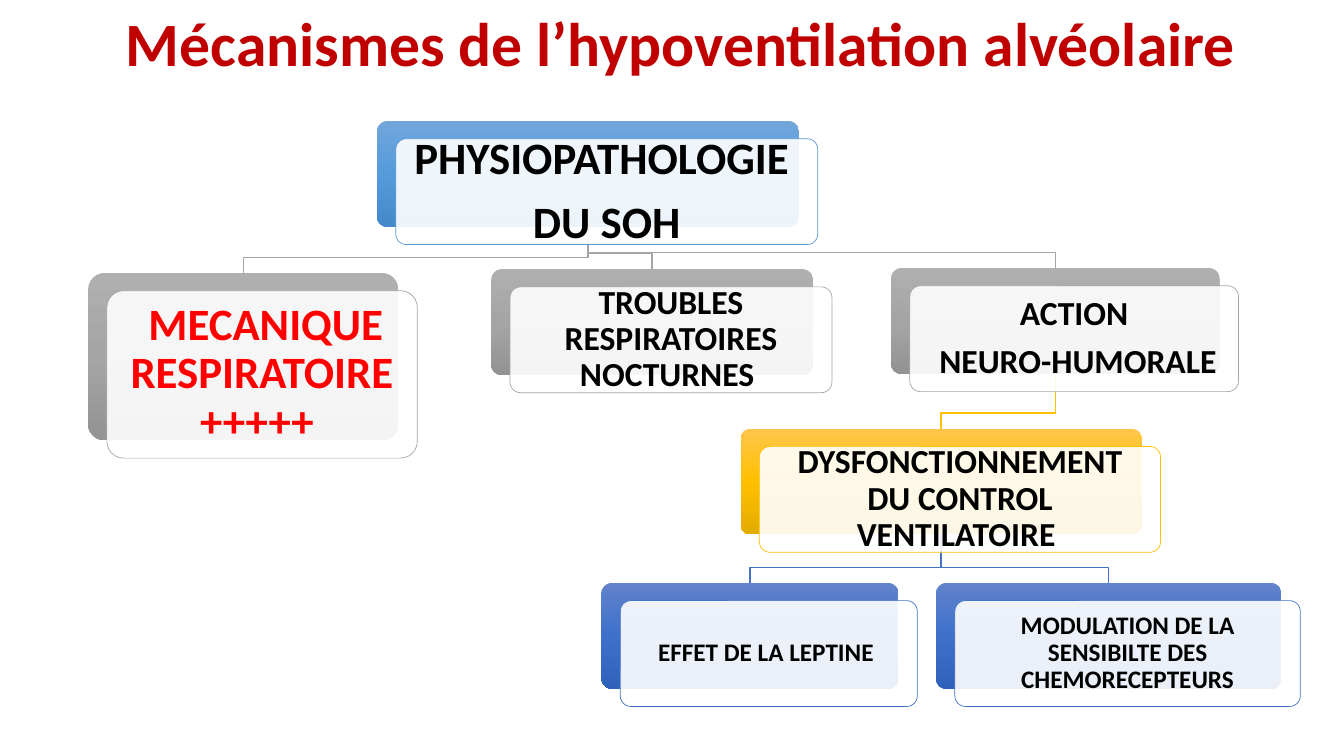
from copy import deepcopy
from lxml.etree import SubElement
from pptx import Presentation
from pptx.dml.color import RGBColor
from pptx.enum.shapes import MSO_SHAPE
from pptx.enum.text import MSO_ANCHOR, PP_ALIGN
from pptx.oxml.ns import qn
from pptx.util import Inches, Pt

WIDE, HIGH = Inches(13.33), Inches(7.5)
COL, ROW = WIDE / 100, HIGH / 100
SHIFT, DROP, BEND = 1.4, 2.35, 2.05

WHITE = RGBColor(0xFF, 0xFF, 0xFF)
BLACK = RGBColor(0x00, 0x00, 0x00)
RED = RGBColor(0xFF, 0x00, 0x00)
DARK = RGBColor(0xC0, 0x00, 0x00)
SKY = [RGBColor(0x71, 0xA6, 0xDB), RGBColor(0x55, 0x9B, 0xDB),
       RGBColor(0x44, 0x8A, 0xCA), RGBColor(0x5B, 0x9B, 0xD5)]
GRAY = [RGBColor(0xAF, 0xAF, 0xAF), RGBColor(0xA5, 0xA5, 0xA5),
        RGBColor(0x93, 0x93, 0x93), RGBColor(0xA5, 0xA5, 0xA5)]
GOLD = [RGBColor(0xFF, 0xC6, 0x4B), RGBColor(0xFF, 0xC0, 0x00),
        RGBColor(0xE3, 0xAB, 0x00), RGBColor(0xFF, 0xC0, 0x00)]
BLUE = [RGBColor(0x61, 0x83, 0xCB), RGBColor(0x3E, 0x70, 0xCA),
        RGBColor(0x30, 0x62, 0xBB), RGBColor(0x44, 0x72, 0xC4)]

NODES = {
    "root": ((28.05, 16, 31.4, 14), SKY, BLACK, 32,
             [[("PHYSIOPATHOLOGIE ", 32)], [("DU SOH", 32)]]),
    "lung": ((6.55, 36.1, 23.1, 22.15), GRAY, RED, 24,
             [[(" ", 24), ("MECANIQUE RESPIRATOIRE +++++ ", 32)]]),
    "night": ((36.55, 35.6, 23.95, 14), GRAY, BLACK, 24,
              [[("TROUBLES RESPIRATOIRES NOCTURNES ", 24)]]),
    "neuro": ((66.3, 35.45, 24.45, 14), GRAY, BLACK, 24,
              [[("ACTION", 24)], [(" NEURO-HUMORALE", 24)]]),
    "control": ((55.1, 56.7, 29.85, 14), GOLD, BLACK, 24,
                [[("DYSFONCTIONNEMENT DU CONTROL VENTILATOIRE ", 24)]]),
    "leptin": ((44.75, 77.1, 22.1, 14), BLUE, BLACK, 18,
               [[("EFFET DE LA LEPTINE ", 18)]]),
    "chemo": ((69.65, 77.1, 25.7, 14), BLUE, BLACK, 18,
              [[("MODULATION DE LA SENSIBILTE DES CHEMORECEPTEURS", 18)]]),
}
LINKS = [("control", "chemo"), ("control", "leptin"), ("neuro", "control"),
         ("root", "neuro"), ("root", "night"), ("root", "lung")]


def scale(x, y, w, h):
    """Turn a box in grid units into slide lengths."""
    return round(x * COL), round(y * ROW), round(w * COL), round(h * ROW)


def write(para, text, size, color):
    """Add one bold run to a centred paragraph."""
    para.alignment = PP_ALIGN.CENTER
    run = para.add_run()
    run.text = text
    font = run.font
    font.name, font.size, font.bold = "Calibri", Pt(size), True
    font.color.rgb = color


def title(slide, box):
    """Place the slide heading."""
    frame = slide.shapes.add_textbox(*scale(*box)).text_frame
    frame.word_wrap = True
    write(frame.paragraphs[0], "Mécanismes de l’hypoventilation alvéolaire", 44, DARK)


def link(slide, top, low, tone):
    """Draw a bent line from the foot of one box to the head of another."""
    start, end = top[0] + top[2] / 2, low[0] + low[2] / 2
    bend = low[1] - BEND
    points = [(start, top[1] + top[3]), (start, bend), (end, bend), (end, low[1])]
    spots = [(round(x * COL), round(y * ROW)) for x, y in points]
    pen = slide.shapes.build_freeform(*spots[0])
    pen.add_line_segments(spots[1:], close=False)
    line = pen.convert_to_shape()
    line.shadow.inherit = False
    line.fill.background()
    line.line.color.rgb = tone[3]
    line.line.width = Pt(1)


def panel(slide, box):
    """Add a rounded panel with no shadow."""
    shape = slide.shapes.add_shape(MSO_SHAPE.ROUNDED_RECTANGLE, *scale(*box))
    shape.adjustments[0] = 0.1
    shape.shadow.inherit = False
    return shape


def shade(shape, tone):
    """Fill a shape with a three-stop gradient from top to bottom."""
    shape.fill.gradient()
    shape.fill.gradient_angle = 270
    stops = shape.element.spPr.find(qn("a:gradFill")).find(qn("a:gsLst"))
    stops.insert(1, deepcopy(stops[0]))
    for index, stop in enumerate(shape.fill.gradient_stops):
        stop.position = index / 2
        stop.color.rgb = tone[index]


def node(slide, box, tone, color, size, paras):
    """Place a shaded panel with a clear text panel over it."""
    x, y, w, h = box
    back = panel(slide, box)
    shade(back, tone)
    back.line.fill.background()
    front = panel(slide, (x + SHIFT, y + DROP, w, h))
    front.fill.solid()
    front.fill.fore_color.rgb = WHITE
    paint = front.element.spPr.find(qn("a:solidFill"))[0]
    SubElement(paint, qn("a:alpha")).set("val", "90000")
    front.line.color.rgb = tone[3]
    front.line.width = Pt(0.5)
    frame = front.text_frame
    frame.word_wrap = True
    frame.vertical_anchor = MSO_ANCHOR.MIDDLE
    frame.margin_left = frame.margin_right = Inches(size / 240)
    frame.margin_top = frame.margin_bottom = Inches(size / 240)
    for index, runs in enumerate(paras):
        para = frame.add_paragraph() if index else frame.paragraphs[0]
        para.line_spacing = 0.9
        para.space_after = Pt(round(size * 0.35))
        for text, points in runs:
            write(para, text, points, color)


def chart(slide):
    """Draw the links and then the boxes of the tree."""
    for top, low in LINKS:
        link(slide, NODES[top][0], NODES[low][0], NODES[low][1])
    for parts in NODES.values():
        node(slide, *parts)


def main():
    """Build and save the slide."""
    deck = Presentation()
    deck.slide_width, deck.slide_height = WIDE, HIGH
    slide = deck.slides.add_slide(deck.slide_layouts[6])
    chart(slide)
    title(slide, (3.45, 0, 94.5, 11.2))
    deck.save("out.pptx")


if __name__ == "__main__":
    main()
